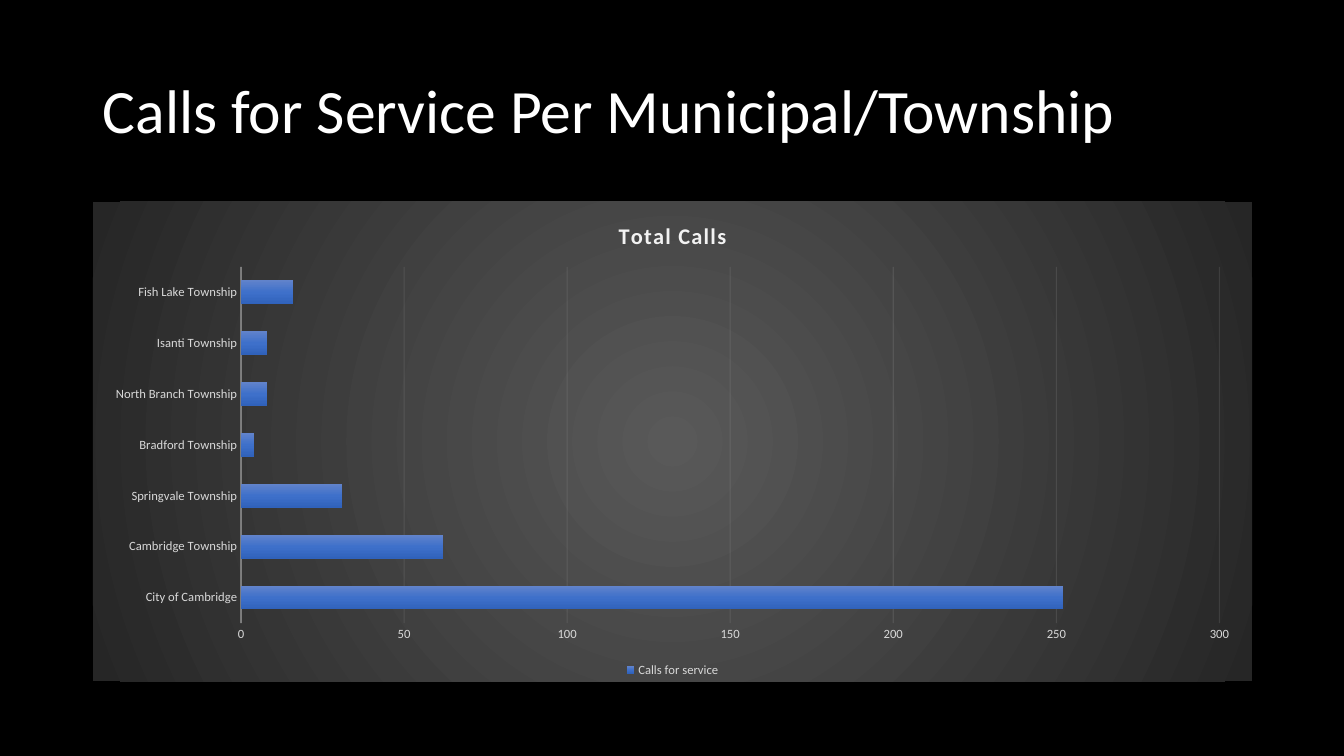
from dataclasses import dataclass

from lxml import etree
from pptx import Presentation
from pptx.chart.data import CategoryChartData
from pptx.dml.color import RGBColor
from pptx.enum.chart import XL_CHART_TYPE, XL_LEGEND_POSITION as LegendPos, XL_TICK_MARK as Tick
from pptx.enum.text import MSO_ANCHOR, PP_ALIGN
from pptx.oxml import parse_xml
from pptx.oxml.ns import nsdecls, qn
from pptx.util import Inches, Pt


@dataclass(frozen=True)
class Theme:
    font: str = "Calibri"
    background: str = "000000"
    title: str = "FFFFFF"
    chart_title: str = "F2F2F2"
    label: str = "D9D9D9"
    line: str = "F2F2F2"
    panel: tuple = ((0, "595959"), (100, "262626"))
    bar: tuple = ((0, "6183CB"), (50, "3E70CA"), (100, "3062BB"))
    title_size: int = 44
    chart_title_size: int = 16
    base_size: int = 10
    label_size: int = 9


THEME = Theme()

CALLS = {
    "City of Cambridge": 252,
    "Cambridge Township": 62,
    "Springvale Township": 31,
    "Bradford Township": 4,
    "North Branch Township": 8,
    "Isanti Township": 8,
    "Fish Lake Township": 16,
}

LINEAR_DOWN = '<a:lin ang="5400000" scaled="0"/>'
FROM_CENTRE = ('<a:path path="circle">'
               '<a:fillToRect l="50000" t="50000" r="50000" b="50000"/></a:path>')


def style_font(font, size, color, bold=False):
    font.name = THEME.font
    font.size = Pt(size)
    font.bold = bold
    font.color.rgb = RGBColor.from_string(color)


def gradient(stops, direction):
    gs = "".join(f'<a:gs pos="{pos * 1000}"><a:srgbClr val="{color}"/></a:gs>'
                 for pos, color in stops)
    return f'<a:gradFill {nsdecls("a")} rotWithShape="1"><a:gsLst>{gs}</a:gsLst>{direction}</a:gradFill>'


def style_line(line, width, opacity):
    line.width = Pt(width)
    line.color.rgb = RGBColor.from_string(THEME.line)
    color = line.fill._xPr.find(".//" + qn("a:srgbClr"))
    etree.SubElement(color, qn("a:alpha"), val=str(opacity * 1000))


def add_title(s, text, left, top, width, height):
    title = s.shapes.title
    title.left, title.top, title.width, title.height = left, top, width, height
    tf = title.text_frame
    tf.text = text
    tf.word_wrap = True
    tf.vertical_anchor = MSO_ANCHOR.MIDDLE
    p = tf.paragraphs[0]
    p.alignment = PP_ALIGN.LEFT
    p.line_spacing = 0.9
    style_font(p.runs[0].font, THEME.title_size, THEME.title)


def add_calls_chart(s, left, top, width, height):
    data = CategoryChartData()
    data.categories = list(CALLS)
    data.add_series("Calls for service", list(CALLS.values()))
    chart = s.shapes.add_chart(XL_CHART_TYPE.BAR_CLUSTERED, left, top, width, height, data).chart
    style_font(chart.font, THEME.base_size, THEME.title)

    # Panel behind the chart
    panel = parse_xml(f'<c:spPr {nsdecls("c", "a")}>{gradient(THEME.panel, FROM_CENTRE)}'
                      '<a:ln><a:noFill/></a:ln></c:spPr>')
    chart._chartSpace.find(qn("c:chart")).addnext(panel)

    # Chart title
    tf = chart.chart_title.text_frame
    tf.text = "Total Calls"
    r = tf.paragraphs[0].runs[0]
    style_font(r.font, THEME.chart_title_size, THEME.chart_title, bold=True)
    r.font._element.set("spc", "100")
    chart.chart_title.include_in_layout = False

    # Bars
    plot = chart.plots[0]
    plot.vary_by_categories = False
    plot.gap_width = 115
    plot.overlap = -20
    fill = plot.series[0].format.fill
    fill.solid()
    solid = fill._xPr.find(qn("a:solidFill"))
    fill._xPr.replace(solid, parse_xml(gradient(THEME.bar, LINEAR_DOWN)))

    # Axes
    for axis in (chart.category_axis, chart.value_axis):
        axis.major_tick_mark = axis.minor_tick_mark = Tick.NONE
        style_font(axis.tick_labels.font, THEME.label_size, THEME.label)
    style_line(chart.category_axis.format.line, 1, 54)
    calls_axis = chart.value_axis
    calls_axis.format.line.fill.background()
    calls_axis.has_major_gridlines = True
    style_line(calls_axis.major_gridlines.format.line, 0.75, 10)

    # Legend
    chart.has_legend = True
    chart.legend.position = LegendPos.BOTTOM
    chart.legend.include_in_layout = False
    style_font(chart.legend.font, THEME.label_size, THEME.label)


def main():
    prs = Presentation()
    prs.slide_width, prs.slide_height = Inches(13.33), Inches(7.5)
    s = prs.slides.add_slide(prs.slide_layouts[5])
    s.background.fill.solid()
    s.background.fill.fore_color.rgb = RGBColor.from_string(THEME.background)

    left, width = Inches(0.92), Inches(11.5)
    add_title(s, "Calls for Service Per Municipal/Township", left, Inches(0.4), width, Inches(1.45))
    add_calls_chart(s, left, Inches(2), width, Inches(4.76))
    prs.save("out.pptx")


if __name__ == "__main__":
    main()
